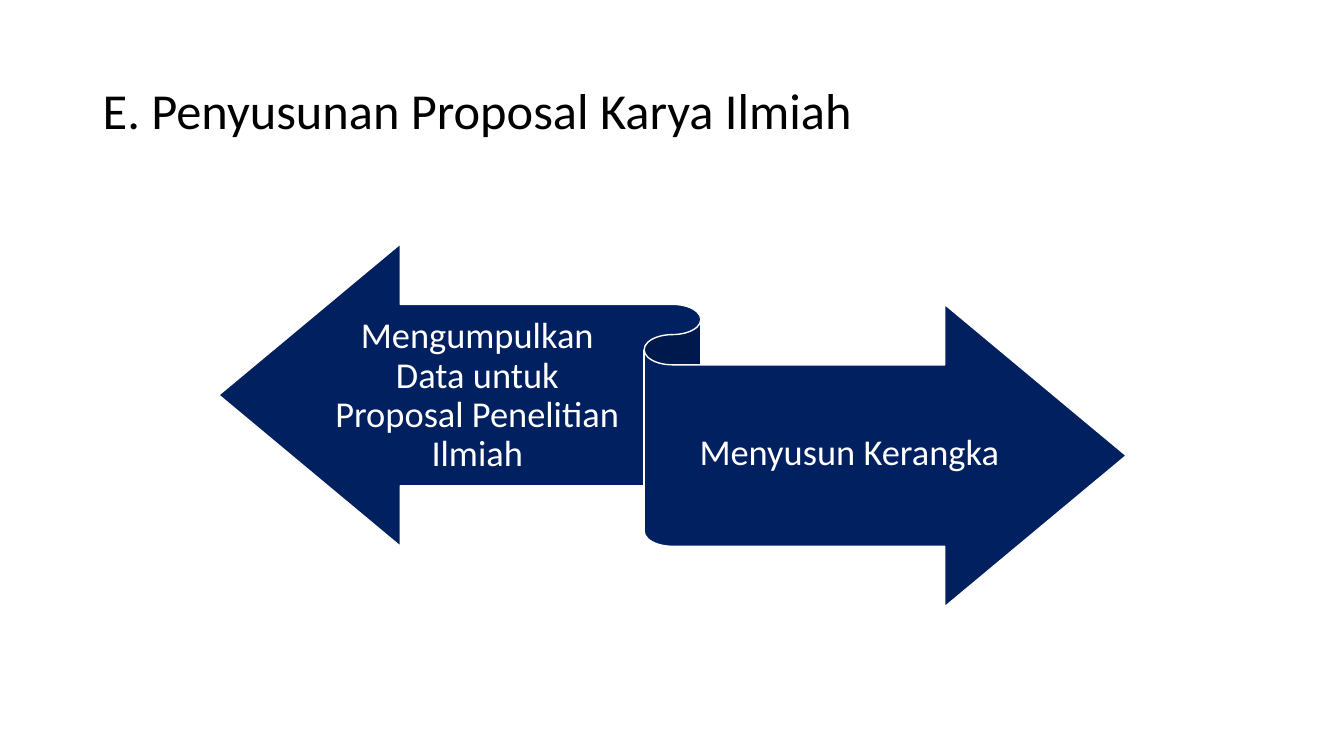
import pptx
import pptx.util
import pptx.dml.color
import pptx.enum.shapes
import pptx.enum.text

Inches = pptx.util.Inches
Pt = pptx.util.Pt
RGB = pptx.dml.color.RGBColor
ALIGN = pptx.enum.text.PP_ALIGN

THEME = {
    "font": "Calibri",
    "title_size": 36,
    "label_size": 26,
    "ink": RGB.from_string("000000"),
    "navy": RGB.from_string("002060"),
    "white": RGB.from_string("FFFFFF"),
}

TITLE = "E. Penyusunan Proposal Karya Ilmiah"
TITLE_BOX = (0.92, 0.4, 11.5, 1.45)
RIBBON_BOX = (2.17, 2.42, 9, 3.6)
LABELS = [
    ("Mengumpulkan Data untuk Proposal Penelitian Ilmiah", 0.12, 0.175, 0.33),
    ("Menyusun Kerangka", 0.5, 0.335, 0.39),
]
LABEL_HEIGHT = 0.49
TITLE_INSETS = (0.1, 0.05, 0.1, 0.05)
LABEL_INSETS = (0, 0.1, 0, 0.11)


def add_text(slide, text, box, size, color, align, insets):
    s = slide.shapes.add_textbox(*map(Inches, box))
    tf = s.text_frame
    tf.word_wrap = True
    tf.vertical_anchor = pptx.enum.text.MSO_ANCHOR.MIDDLE
    tf.margin_left, tf.margin_top, tf.margin_right, tf.margin_bottom = map(Inches, insets)
    p = tf.paragraphs[0]
    p.text = text
    p.alignment = align
    p.line_spacing = 0.9
    r = p.runs[0]
    r.font.name = THEME["font"]
    r.font.size = Pt(size)
    r.font.color.rgb = color


def add_ribbon(slide):
    s = slide.shapes.add_shape(
        pptx.enum.shapes.MSO_SHAPE.LEFT_RIGHT_RIBBON, *map(Inches, RIBBON_BOX))
    s.shadow.inherit = False
    s.fill.solid()
    s.fill.fore_color.rgb = THEME["navy"]
    s.line.color.rgb = THEME["white"]
    s.line.width = Pt(1)


def main():
    prs = pptx.Presentation()
    prs.slide_width, prs.slide_height = Inches(13.33), Inches(7.5)
    slide = prs.slides.add_slide(prs.slide_layouts[6])
    add_text(slide, TITLE, TITLE_BOX, THEME["title_size"], THEME["ink"],
             ALIGN.LEFT, TITLE_INSETS)
    add_ribbon(slide)
    left, top, width, height = RIBBON_BOX
    for text, x, y, w in LABELS:
        box = (left + x * width, top + y * height, w * width, LABEL_HEIGHT * height)
        add_text(slide, text, box, THEME["label_size"], THEME["white"],
                 ALIGN.CENTER, LABEL_INSETS)
    prs.save("out.pptx")


if __name__ == "__main__":
    main()
